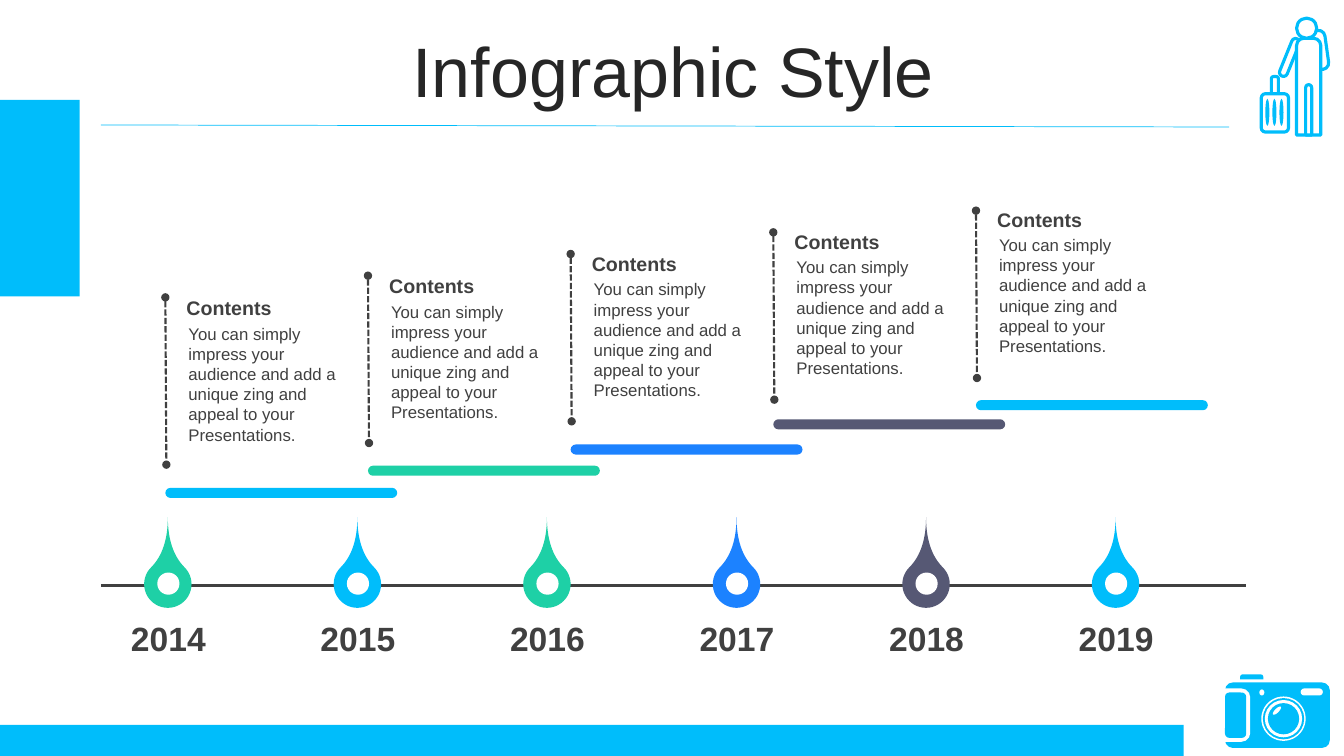
from dataclasses import dataclass
from typing import Optional

from lxml import etree
from pptx import Presentation
from pptx import util as u
from pptx.dml import color as dml
from pptx.enum import dml as line_styles
from pptx.enum import shapes, text
from pptx.oxml import ns

CYAN, GREEN, BLUE, SLATE = "00BDFB", "1ED0A6", "1C82FF", "565874"
DARK, WHITE = "404040", "FFFFFF"
KIND = shapes.MSO_SHAPE
BODY = "You can simply impress your audience and add a unique zing and appeal to your Presentations."


@dataclass
class Part:
    kind: KIND
    left: float
    top: float
    width: float
    height: float
    color: str
    adjustment: Optional[float] = None
    rotation: float = 0
    outline: Optional[str] = None


@dataclass
class Card:
    color: str
    bar_top: float


CARDS = [Card(CYAN, 4.84), Card(GREEN, 4.62), Card(BLUE, 4.41),
         Card(SLATE, 4.16), Card(CYAN, 3.97)]
CARD_LEFT, CARD_PITCH = 1.64, 2.01
STEM_TOP, STEM_RISE, STEM_HEIGHT = 2.95, 0.86 / 4, 1.66
TEXT_TOP, TEXT_RISE = 2.89, 0.22

FIRST_YEAR = 2014
MILESTONE_COLORS = [GREEN, CYAN, GREEN, BLUE, SLATE, CYAN]
MILESTONE_LEFT, MILESTONE_PITCH = 1.07, 1.88

LENS_X, LENS_Y = 12.73, 7.13
LENS_RINGS = [(0.44, WHITE), (0.41, CYAN), (0.37, WHITE), (0.31, CYAN)]
CAMERA = [
    Part(KIND.ROUNDED_RECTANGLE, 12.15, 6.77, 1.04, 0.65, CYAN, 0.12),
    Part(KIND.ROUNDED_RECTANGLE, 12.05, 6.83, 0.35, 0.53, WHITE, 0.25),
    Part(KIND.ROUNDED_RECTANGLE, 12.15, 6.87, 0.21, 0.45, CYAN, 0.2),
    Part(KIND.ROUND_2_SAME_RECTANGLE, 12.3, 6.69, 0.23, 0.05, CYAN, 0.5),
    Part(KIND.ROUNDED_RECTANGLE, 12.9, 6.83, 0.22, 0.07, WHITE, 0.5),
    Part(KIND.OVAL, 12.49, 6.84, 0.05, 0.06, WHITE),
    *(Part(KIND.OVAL, LENS_X - size / 2, LENS_Y - size / 2, size, size, color)
      for size, color in LENS_RINGS),
    Part(KIND.OVAL, 12.61, 7.03, 0.11, 0.04, WHITE, rotation=315),
]
TRAVELER = [
    Part(KIND.ROUNDED_RECTANGLE, 12.75, 0.37, 0.08, 0.4, WHITE, 0.5, 22, CYAN),
    Part(KIND.ROUNDED_RECTANGLE, 13.03, 0.3, 0.13, 0.39, WHITE, 0.5, 352, CYAN),
    Part(KIND.ROUND_2_SAME_RECTANGLE, 12.86, 0.38, 0.24, 0.96, WHITE, 0.3, outline=CYAN),
    Part(KIND.ROUND_2_SAME_RECTANGLE, 12.95, 0.84, 0.06, 0.5, WHITE, 0.5, outline=CYAN),
    Part(KIND.OVAL, 12.86, 0.18, 0.2, 0.2, WHITE, outline=CYAN),
    Part(KIND.ROUNDED_RECTANGLE, 12.61, 0.76, 0.07, 0.2, WHITE, 0.3, outline=CYAN),
    Part(KIND.ROUNDED_RECTANGLE, 12.51, 0.93, 0.27, 0.38, WHITE, 0.15, outline=CYAN),
    *(Part(KIND.OVAL, 12.55 + rib * 0.07, 0.98, 0.04, 0.27, CYAN) for rib in range(3)),
]


def rgb(color: str) -> dml.RGBColor:
    return dml.RGBColor.from_string(color)


def add_part(slide, part: Part) -> None:
    shape = slide.shapes.add_shape(part.kind, u.Inches(part.left), u.Inches(part.top),
                                   u.Inches(part.width), u.Inches(part.height))
    if part.adjustment is not None:
        shape.adjustments[0] = part.adjustment
    shape.rotation = part.rotation
    shape.shadow.inherit = False
    shape.fill.solid()
    shape.fill.fore_color.rgb = rgb(part.color)
    if part.outline:
        shape.line.color.rgb = rgb(part.outline)
        shape.line.width = u.Pt(2.25)
    else:
        shape.line.fill.background()


def add_line(slide, start: tuple, end: tuple, color: str, width: float,
             pinned: bool = False) -> None:
    connector = slide.shapes.add_connector(shapes.MSO_CONNECTOR.STRAIGHT,
                                           *map(u.Inches, start + end))
    connector.line.color.rgb = rgb(color)
    connector.line.width = u.Pt(width)
    properties = connector._element.spPr
    if pinned:
        connector.line.dash_style = line_styles.MSO_LINE.SQUARE_DOT
        outline = properties.find(ns.qn("a:ln"))
        outline.find(ns.qn("a:prstDash")).set("val", "sysDash")
        for end_name in ("a:headEnd", "a:tailEnd"):
            etree.SubElement(outline, ns.qn(end_name), type="oval")
    etree.SubElement(properties, ns.qn("a:effectLst"))


def format_text(frame, words: str, size: float, color: str, bold: bool = False,
                centered: bool = False) -> None:
    frame.word_wrap = True
    frame.text = words
    paragraph = frame.paragraphs[0]
    paragraph.alignment = text.PP_ALIGN.CENTER if centered else text.PP_ALIGN.LEFT
    paragraph.font.name = "Arial"
    paragraph.font.size = u.Pt(size)
    paragraph.font.bold = bold
    paragraph.font.color.rgb = rgb(color)


def add_text(slide, box: tuple, words: str, size: float, bold: bool = False,
             centered: bool = False, insets: tuple = (0.1, 0.05)) -> None:
    frame = slide.shapes.add_textbox(*map(u.Inches, box)).text_frame
    frame.margin_left = frame.margin_right = u.Inches(insets[0])
    frame.margin_top = frame.margin_bottom = u.Inches(insets[1])
    format_text(frame, words, size, DARK, bold, centered)


def add_title(slide, words: str) -> None:
    title = slide.shapes.title
    title.left, title.top = u.Inches(0.35), u.Inches(0.37)
    title.width, title.height = u.Inches(12.66), u.Inches(0.79)
    title.text_frame.vertical_anchor = text.MSO_ANCHOR.MIDDLE
    format_text(title.text_frame, words, 50, "262626", centered=True)
    title.text_frame.paragraphs[0].line_spacing = 0.8


def add_milestone(slide, index: int, color: str) -> None:
    left = MILESTONE_LEFT + index * MILESTONE_PITCH
    add_part(slide, Part(KIND.TEAR, left + 0.36, 5.56, 0.47, 0.47, color, 2, 315))
    add_text(slide, (left, 6.13, 1.2, 0.4), str(FIRST_YEAR + index), 24, True, True, (0, 0))
    add_part(slide, Part(KIND.OVAL, left + 0.49, 5.68, 0.22, 0.22, WHITE))


def add_card(slide, index: int, card: Card) -> None:
    left = CARD_LEFT + index * CARD_PITCH
    text_top = TEXT_TOP - index * TEXT_RISE
    stem_top = STEM_TOP - index * STEM_RISE
    add_part(slide, Part(KIND.ROUNDED_RECTANGLE, left, card.bar_top, 2.3, 0.1, card.color, 0.5))
    add_text(slide, (left + 0.13, text_top + 0.27, 1.72, 1.31), BODY, 12)
    add_text(slide, (left + 0.09, text_top, 1.73, 0.34), "Contents", 14, True,
             insets=(0.12, 0.05))
    add_line(slide, (left, stem_top), (left + 0.01, stem_top + STEM_HEIGHT), DARK, 1.5, True)


def main() -> None:
    presentation = Presentation()
    presentation.slide_width, presentation.slide_height = u.Inches(13.33), u.Inches(7.5)
    slide = presentation.slides.add_slide(presentation.slide_layouts[5])
    add_title(slide, "Infographic Style")
    add_part(slide, Part(KIND.RECTANGLE, 0, 7.19, 11.74, 0.31, CYAN))
    add_part(slide, Part(KIND.RECTANGLE, 0, 0.99, 0.79, 1.95, CYAN))
    add_line(slide, (1, 1.24), (12.19, 1.26), CYAN, 0.5)
    add_line(slide, (1, 5.81), (12.36, 5.81), DARK, 1.75)
    for index, color in enumerate(MILESTONE_COLORS):
        add_milestone(slide, index, color)
    for index, card in enumerate(CARDS):
        add_card(slide, index, card)
    for part in TRAVELER + CAMERA:
        add_part(slide, part)
    presentation.save("out.pptx")


if __name__ == "__main__":
    main()
